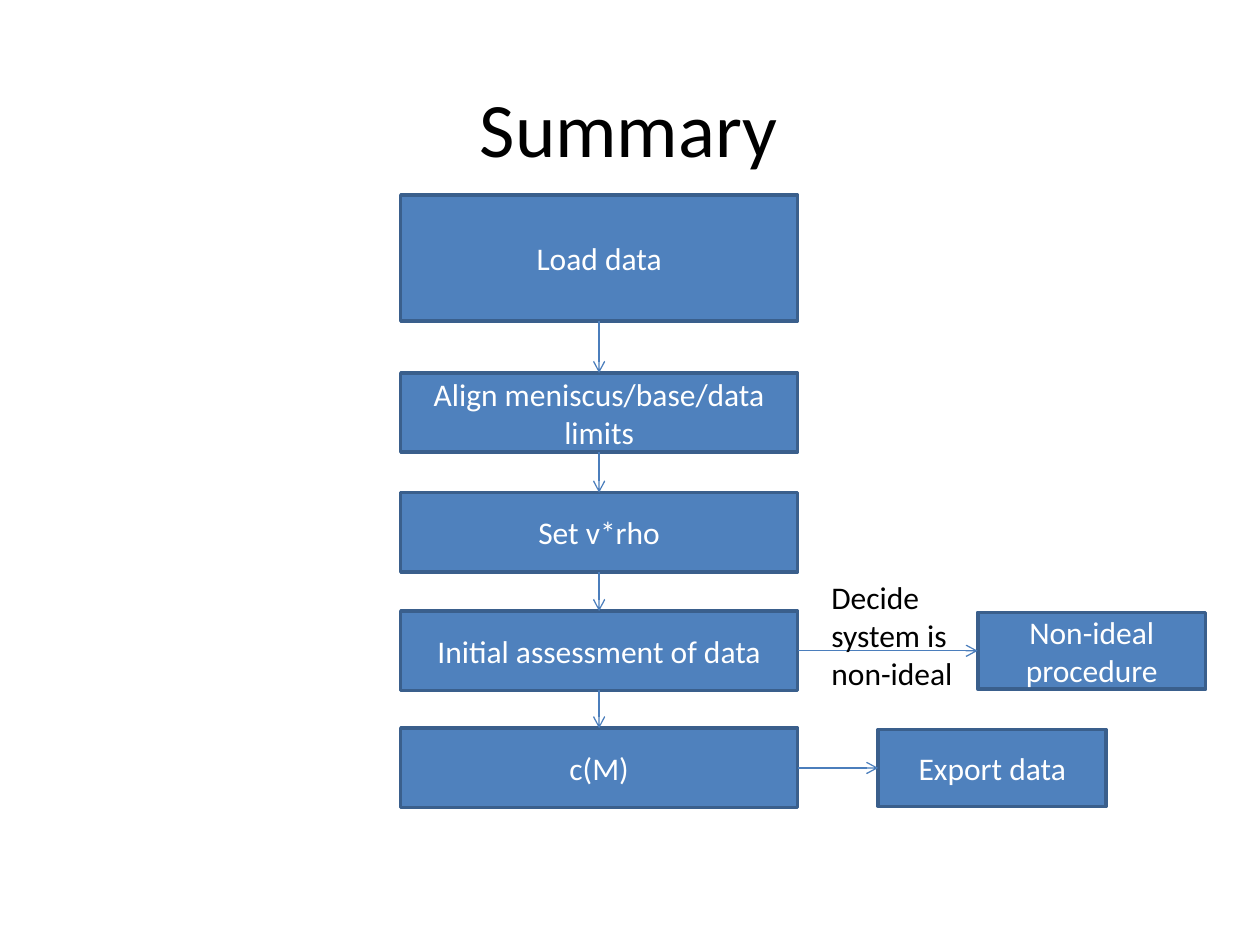
from lxml import etree
from pptx import Presentation
from pptx import util as u
from pptx.dml.color import RGBColor
from pptx.enum import shapes, text
from pptx.oxml import ns

COLORS = {"fill": "4F81BD", "border": "3A5F8C", "arrow": "4B7EBC",
          "dark": "000000", "light": "FFFFFF"}
FONT = "Calibri"
TOP, LEFT, BOTTOM, RIGHT = range(4)  # connection sites of a rectangle

# label, top within the column, height
STEPS = [
    ("Load data", 0, 1),
    ("Align meniscus/base/data limits", 1.41, 0.63),
    ("Set v*rho", 2.36, 0.63),
    ("Initial assessment of data", 3.3, 0.63),
    ("c(M)", 4.23, 0.63),
]


def color(name):
    return RGBColor.from_string(COLORS[name])


def write(shape, words, size, color_name, align, anchor):
    frame = shape.text_frame
    frame.word_wrap = True
    frame.vertical_anchor = anchor
    frame.text = words
    paragraph = frame.paragraphs[0]
    paragraph.alignment = align
    font = paragraph.runs[0].font
    font.name, font.size = FONT, u.Pt(size)
    font.color.rgb = color(color_name)


def add_label(slide, words, box, size=18, align=text.PP_ALIGN.LEFT,
              anchor=text.MSO_ANCHOR.TOP):
    label = slide.shapes.add_textbox(*map(u.Inches, box))
    write(label, words, size, "dark", align, anchor)


def add_process(slide, words, box):
    process = slide.shapes.add_shape(
        shapes.MSO_SHAPE.RECTANGLE, *map(u.Inches, box))
    process.shadow.inherit = False
    process.fill.solid()
    process.fill.fore_color.rgb = color("fill")
    process.line.color.rgb = color("border")
    process.line.width = u.Pt(2)
    write(process, words, 18, "light", text.PP_ALIGN.CENTER,
          text.MSO_ANCHOR.MIDDLE)
    return process


def add_arrow(slide, start, start_site, end, end_site):
    arrow = slide.shapes.add_connector(
        shapes.MSO_CONNECTOR.STRAIGHT, 0, 0, 0, 0)
    arrow.begin_connect(start, start_site)
    arrow.end_connect(end, end_site)
    arrow.line.color.rgb = color("arrow")
    arrow.line.width = u.Pt(0.75)
    etree.SubElement(arrow.line._get_or_add_ln(), ns.qn("a:tailEnd"),
                     type="arrow")
    etree.SubElement(arrow._element.spPr, ns.qn("a:effectLst"))


def add_steps(slide, left, top, width):
    """Stack the steps, join them downwards and return their shapes."""
    steps = [add_process(slide, words, (left, top + offset, width, height))
             for words, offset, height in STEPS]
    for upper, lower in zip(steps, steps[1:]):
        add_arrow(slide, upper, BOTTOM, lower, TOP)
    return steps


def add_branch(slide, step, words, box):
    branch = add_process(slide, words, box)
    add_arrow(slide, step, RIGHT, branch, LEFT)


def main():
    presentation = Presentation()
    presentation.slide_width = u.Inches(10)
    presentation.slide_height = u.Inches(7.5)
    slide = presentation.slides.add_slide(presentation.slide_layouts[6])

    add_label(slide, "Summary", (0.49, 0.38, 9, 1.25), 44,
              text.PP_ALIGN.CENTER, text.MSO_ANCHOR.MIDDLE)
    *_, assessment, distribution = add_steps(slide, 3.18, 1.55, 3.15)
    add_branch(slide, distribution, "Export data", (6.97, 5.79, 1.81, 0.61))
    add_branch(slide, assessment, "Non-ideal procedure",
               (7.76, 4.86, 1.81, 0.61))
    add_label(slide, "Decide system is non-ideal", (6.5, 4.54, 1.18, 1.01))
    presentation.save("out.pptx")


if __name__ == "__main__":
    main()
